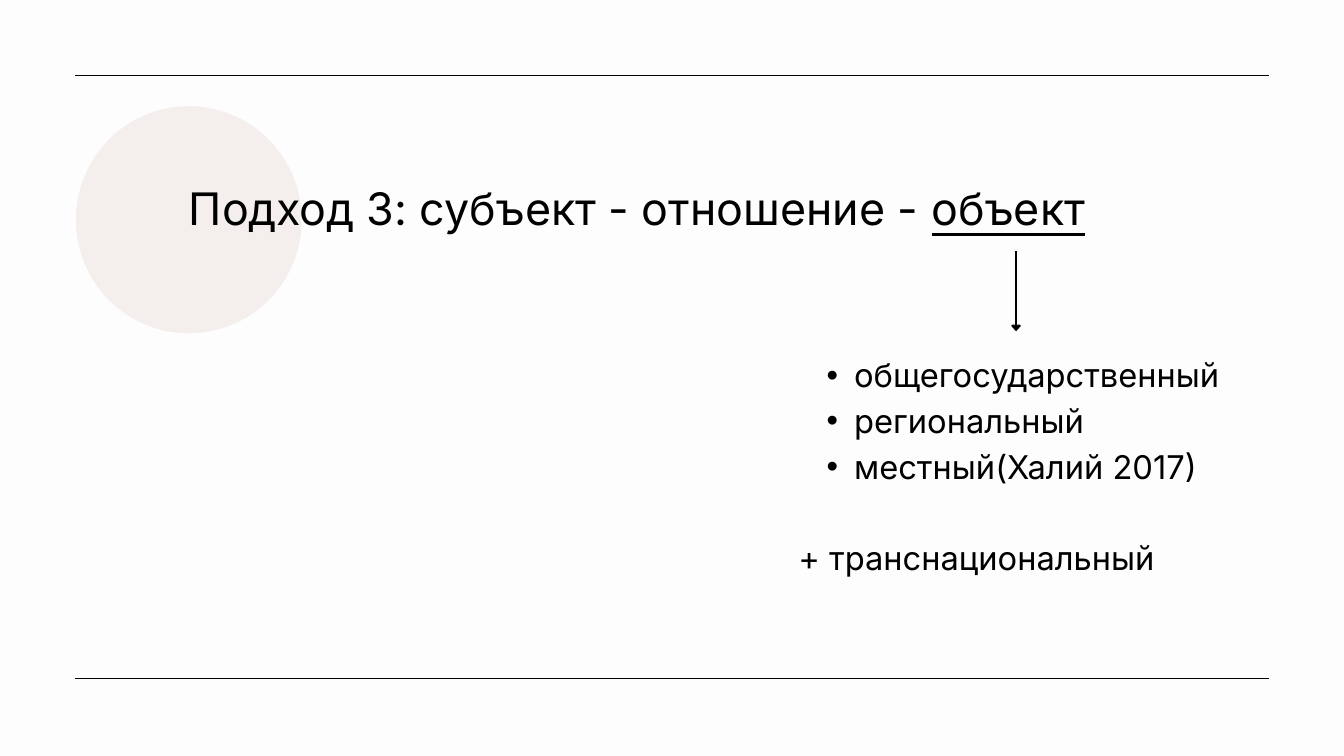
"""Build the slide about the third approach: subject, relation, object."""
import dataclasses
import typing

import pptx
import pptx.dml.color
import pptx.enum.shapes
import pptx.enum.text
import pptx.oxml
import pptx.oxml.ns
import pptx.util

EMU_PER_PX = 9144
SLIDE_WIDTH, SLIDE_HEIGHT = 2000, 1125
MARGIN = 112
BLACK = pptx.dml.color.RGBColor(0x00, 0x00, 0x00)
PAPER = pptx.dml.color.RGBColor(0xFD, 0xFD, 0xFD)
BLUSH = pptx.dml.color.RGBColor(0xF4, 0xEF, 0xED)
FONT_NAME = "Inter"


@dataclasses.dataclass(frozen=True)
class Line:
    start: tuple[int, int]
    end: tuple[int, int]
    points: float
    arrow: bool = False


@dataclasses.dataclass(frozen=True)
class Paragraph:
    spans: tuple[tuple[str, bool], ...]
    bullet: bool = False
    before: int = 0


@dataclasses.dataclass(frozen=True)
class TextBlock:
    frame: tuple[int, int, int, int]
    size: int
    leading: float
    paragraphs: tuple[Paragraph, ...]


LINES = (
    Line((MARGIN, 1010), (SLIDE_WIDTH - MARGIN, 1010), 1.5),
    Line((MARGIN, MARGIN), (SLIDE_WIDTH - MARGIN, MARGIN), 1.5),
    Line((1512, 374), (1512, 493), 3, arrow=True),
)
CIRCLE_FRAME = (113, 158, 336, 338)
OBJECT_LEVELS = ("общегосударственный", "региональный", "местный(Халий 2017)")
TITLE = TextBlock(
    (281, 255, 1606, 90), 48, 67.2,
    (Paragraph((("Подход 3: субъект - отношение - ", False), ("объект", True))),),
)
LEVELS = TextBlock(
    (1188, 519, 648, 405), 35, 49,
    tuple(Paragraph(((level, False),), bullet=True) for level in OBJECT_LEVELS)
    + (Paragraph((("+ транснациональный", False),), before=49),),
)


def px(*lengths: int) -> list[pptx.util.Emu]:
    """Turn px lengths into EMU."""
    return [pptx.util.Emu(length * EMU_PER_PX) for length in lengths]


def set_values(target: typing.Any, values: dict[str, typing.Any]) -> None:
    """Set each named attribute of the target."""
    for name, value in values.items():
        setattr(target, name, value)


def add_element(parent: typing.Any, tag: str, **attributes: str) -> None:
    """Append a DrawingML element to the parent."""
    child = pptx.oxml.parse_xml(f"<a:{tag} {pptx.oxml.ns.nsdecls('a')}/>")
    for name, value in attributes.items():
        child.set(name, value)
    parent.append(child)


def draw_line(slide: typing.Any, line: Line) -> None:
    """Draw a straight black line, with an arrowhead if asked."""
    connector = slide.shapes.add_connector(
        pptx.enum.shapes.MSO_CONNECTOR.STRAIGHT, *px(*line.start, *line.end)
    )
    connector.line.color.rgb = BLACK
    connector.line.width = pptx.util.Pt(line.points)
    if line.arrow:
        add_element(connector.line.get_or_add_ln() if hasattr(connector.line, "get_or_add_ln")
                    else connector.get_or_add_ln(), "tailEnd", type="arrow", w="med", len="sm")
    add_element(connector.element.spPr, "effectLst")


def draw_circle(slide: typing.Any) -> None:
    """Draw the pale circle behind the title."""
    circle = slide.shapes.add_shape(pptx.enum.shapes.MSO_SHAPE.OVAL, *px(*CIRCLE_FRAME))
    circle.shadow.inherit = False
    circle.fill.solid()
    circle.fill.fore_color.rgb = BLUSH
    circle.line.fill.background()


def add_bullet(para: typing.Any) -> None:
    """Give the paragraph a hanging round bullet."""
    para.level = 1
    properties = para._p.get_or_add_pPr()
    indent, hanging = px(83, -41)
    properties.set("marL", str(indent))
    properties.set("indent", str(hanging))
    add_element(properties, "buFont", typeface="Arial")
    add_element(properties, "buChar", char="•")


def draw_text(slide: typing.Any, block: TextBlock) -> None:
    """Draw a text box with its paragraphs and spans."""
    frame = slide.shapes.add_textbox(*px(*block.frame)).text_frame
    set_values(frame, {
        "word_wrap": True,
        "auto_size": pptx.enum.text.MSO_AUTO_SIZE.SHAPE_TO_FIT_TEXT,
        "margin_left": 0, "margin_top": 0, "margin_right": 0, "margin_bottom": 0,
    })
    for index, paragraph in enumerate(block.paragraphs):
        para = frame.add_paragraph() if index else frame.paragraphs[0]
        set_values(para, {
            "line_spacing": pptx.util.Pt(block.leading),
            "space_before": pptx.util.Pt(paragraph.before),
        })
        if paragraph.bullet:
            add_bullet(para)
        for text, underlined in paragraph.spans:
            span = para.add_run()
            span.text = text
            set_values(span.font, {
                "name": FONT_NAME,
                "size": pptx.util.Pt(block.size),
                "underline": underlined or None,
            })
            span.font.color.rgb = BLACK


def main() -> None:
    """Build and save the deck."""
    deck = pptx.Presentation()
    deck.slide_width, deck.slide_height = px(SLIDE_WIDTH, SLIDE_HEIGHT)
    slide = deck.slides.add_slide(deck.slide_layouts[6])
    slide.background.fill.solid()
    slide.background.fill.fore_color.rgb = PAPER
    draw_circle(slide)
    for line in LINES:
        draw_line(slide, line)
    for block in (TITLE, LEVELS):
        draw_text(slide, block)
    deck.save("out.pptx")


if __name__ == "__main__":
    main()
